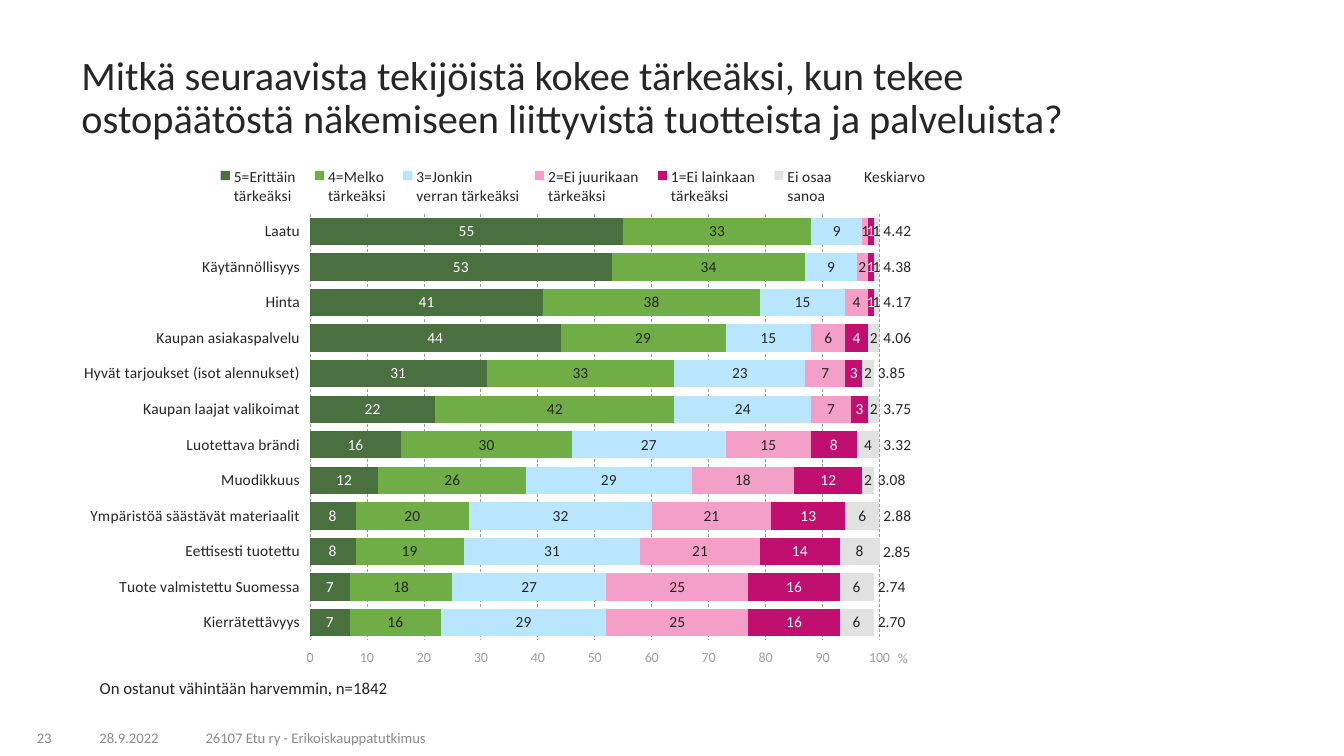
"""Build a slide with a stacked bar chart of purchase decision factors."""
from lxml import etree
from pptx import Presentation
from pptx.chart.data import CategoryChartData
from pptx.dml.color import RGBColor
from pptx.enum.chart import (XL_CHART_TYPE, XL_LABEL_POSITION, XL_LEGEND_POSITION,
                             XL_TICK_LABEL_POSITION, XL_TICK_MARK)
from pptx.enum.dml import MSO_LINE
from pptx.enum.text import MSO_ANCHOR, PP_ALIGN
from pptx.oxml.ns import qn
from pptx.util import Inches, Pt

LEFT, CENTER, RIGHT = PP_ALIGN.LEFT, PP_ALIGN.CENTER, PP_ALIGN.RIGHT
TOP, MIDDLE, BOTTOM = MSO_ANCHOR.TOP, MSO_ANCHOR.MIDDLE, MSO_ANCHOR.BOTTOM
LABEL_CENTER, LABEL_BASE = XL_LABEL_POSITION.CENTER, XL_LABEL_POSITION.INSIDE_BASE
TICKS_LOW, TICKS_HIGH = XL_TICK_LABEL_POSITION.LOW, XL_TICK_LABEL_POSITION.HIGH
NO_TICK = XL_TICK_MARK.NONE

COLORS = {"text": "262626", "footer": "8C8C8C", "axis": "A0A0A0", "white": "FFFFFF",
          "dark green": "4A7040", "green": "70AD47", "blue": "B9E6FD",
          "pink": "F39FC7", "magenta": "C10F70", "grey": "E1E1E1"}


def style_font(font, size, color):
    """Give a font its typeface, size and colour."""
    for name, value in {"name": "Calibri", "size": Pt(size), "bold": False}.items():
        setattr(font, name, value)
    font.color.rgb = RGBColor.from_string(COLORS[color])


def place(part, index, **fractions):
    """Place a chart part by fractions of the chart area."""
    for old in part.findall(qn("c:layout")):
        part.remove(old)
    layout = etree.Element(qn("c:layout"))
    manual = etree.SubElement(layout, qn("c:manualLayout"))
    settings = {"xMode": "edge", "yMode": "edge", **fractions}
    if part.tag == qn("c:plotArea"):
        settings = {"layoutTarget": "inner", **settings}
    for name, value in settings.items():
        etree.SubElement(manual, qn(f"c:{name}")).set("val", str(value))
    part.insert(index, layout)


deck = Presentation()
deck.slide_width, deck.slide_height = Inches(13.33), Inches(7.5)
page = deck.slides.add_slide(deck.slide_layouts[6])

texts = [
    ("Mitkä seuraavista tekijöistä kokee tärkeäksi, kun tekee \n"
     "ostopäätöstä näkemiseen liittyvistä tuotteista ja palveluista?",
     (0.71, 0.64, 12.07, 0.68), 28.8, "text", MIDDLE, LEFT, 0.9),
    ("On ostanut vähintään harvemmin, n=1842",
     (0.89, 6.7, 3.55, 0.28), 12, "text", TOP, LEFT, 0.9),
    ("2.85", (8.66, 5.33, 0.6, 0.28), 11, "text", MIDDLE, LEFT, 1.0),
    ("23", (0.02, 7.15, 0.59, 0.3), 10.5, "footer", BOTTOM, RIGHT, 1.0),
    ("28.9.2022", (0.66, 7.15, 1.24, 0.3), 10.5, "footer", BOTTOM, CENTER, 1.0),
    ("26107 Etu ry - Erikoiskauppatutkimus",
     (1.94, 7.15, 5.92, 0.3), 10.5, "footer", BOTTOM, LEFT, 1.0),
]
for text, bounds, size, color, anchor, align, spacing in texts:
    box = page.shapes.add_textbox(*map(Inches, bounds))
    frame = box.text_frame
    frame.word_wrap = True
    frame.vertical_anchor = anchor
    para = frame.paragraphs[0]
    para.text = text
    para.alignment = align
    para.line_spacing = spacing
    for span in para.runs:
        style_font(span.font, size, color)

factors = ["Laatu", "Käytännöllisyys", "Hinta", "Kaupan asiakaspalvelu",
           "Hyvät tarjoukset (isot alennukset)", "Kaupan laajat valikoimat",
           "Luotettava brändi", "Muodikkuus", "Ympäristöä säästävät materiaalit",
           "Eettisesti tuotettu", "Tuote valmistettu Suomessa", "Kierrätettävyys"]
answers = [
    ("5=Erittäin \ntärkeäksi", "dark green", "white",
     [55, 53, 41, 44, 31, 22, 16, 12, 8, 8, 7, 7]),
    ("4=Melko \ntärkeäksi", "green", "text",
     [33, 34, 38, 29, 33, 42, 30, 26, 20, 19, 18, 16]),
    ("3=Jonkin \nverran tärkeäksi", "blue", "text",
     [9, 9, 15, 15, 23, 24, 27, 29, 32, 31, 27, 29]),
    ("2=Ei juurikaan \ntärkeäksi", "pink", "text",
     [1, 2, 4, 6, 7, 7, 15, 18, 21, 21, 25, 25]),
    ("1=Ei lainkaan \ntärkeäksi", "magenta", "white",
     [1, 1, 1, 4, 3, 3, 8, 12, 13, 14, 16, 16]),
    ("Ei osaa \nsanoa", "grey", "text", [1, 1, 1, 2, 2, 2, 4, 2, 6, 8, 6, 6]),
    ("Keskiarvo", None, "text",
     [4.42, 4.38, 4.17, 4.06, 3.85, 3.75, 3.32, 3.08, 2.88, 2.85, 2.74, 2.7]),
]
data = CategoryChartData()
data.categories = factors
for name, fill, label_color, values in answers:
    data.add_series(name, values)
chart = page.shapes.add_chart(XL_CHART_TYPE.BAR_STACKED, Inches(0.71), Inches(1.46),
                              Inches(8.6), Inches(5.24), data).chart
style_font(chart.font, 12, "text")
chart.has_title = False

plot = chart.plots[0]
for name, value in {"gap_width": 30, "overlap": 100, "vary_by_categories": False}.items():
    setattr(plot, name, value)
for series, (name, fill, label_color, values) in zip(plot.series, answers):
    if fill:
        series.format.fill.solid()
        series.format.fill.fore_color.rgb = RGBColor.from_string(COLORS[fill])
    else:
        series.format.fill.background()
    series.format.line.fill.background()
    labels = series.data_labels
    label_format = {"show_value": True, "number_format_is_linked": False,
                    "number_format": "#,##0" if fill else "#,##0.00",
                    "position": LABEL_CENTER if fill else LABEL_BASE}
    for key, value in label_format.items():
        setattr(labels, key, value)
    style_font(labels.font, 11, label_color)

factor_axis, percent_axis = chart.category_axis, chart.value_axis
axis_formats = [
    (factor_axis, 11, "text", {"reverse_order": True, "tick_label_position": TICKS_LOW}),
    (percent_axis, 10, "axis",
     {"minimum_scale": 0, "maximum_scale": 100.01, "major_unit": 10,
      "has_major_gridlines": True, "tick_label_position": TICKS_HIGH}),
]
for axis, size, color, settings in axis_formats:
    ticks = {"major_tick_mark": NO_TICK, "minor_tick_mark": NO_TICK}
    for key, value in {**ticks, **settings}.items():
        setattr(axis, key, value)
    axis.format.line.fill.background()
    style_font(axis.tick_labels.font, size, color)
percent_axis.tick_labels.number_format = "General"
percent_axis.tick_labels.number_format_is_linked = False
grid = percent_axis.major_gridlines.format.line
grid.color.rgb = RGBColor.from_string(COLORS["axis"])
grid.width = Pt(0.5)
grid.dash_style = MSO_LINE.DASH

unit = percent_axis.axis_title
unit.text_frame.text = "%"
style_font(unit.text_frame.paragraphs[0].runs[0].font, 10, "axis")

chart.has_legend = True
legend = chart.legend
legend.position = XL_LEGEND_POSITION.TOP
legend.include_in_layout = False
style_font(legend.font, 11, "text")

plot_area = chart.element.find(f".//{qn('c:plotArea')}")
place(plot_area, 0, x=0.275, y=0.126, w=0.657, h=0.808)
place(plot_area.find(f".//{qn('c:title')}"), 1, x=0.95, y=0.946)
place(chart.element.find(f".//{qn('c:legend')}"), 1, x=0.16, y=0.03, w=0.837, h=0.09)

deck.save("out.pptx")
